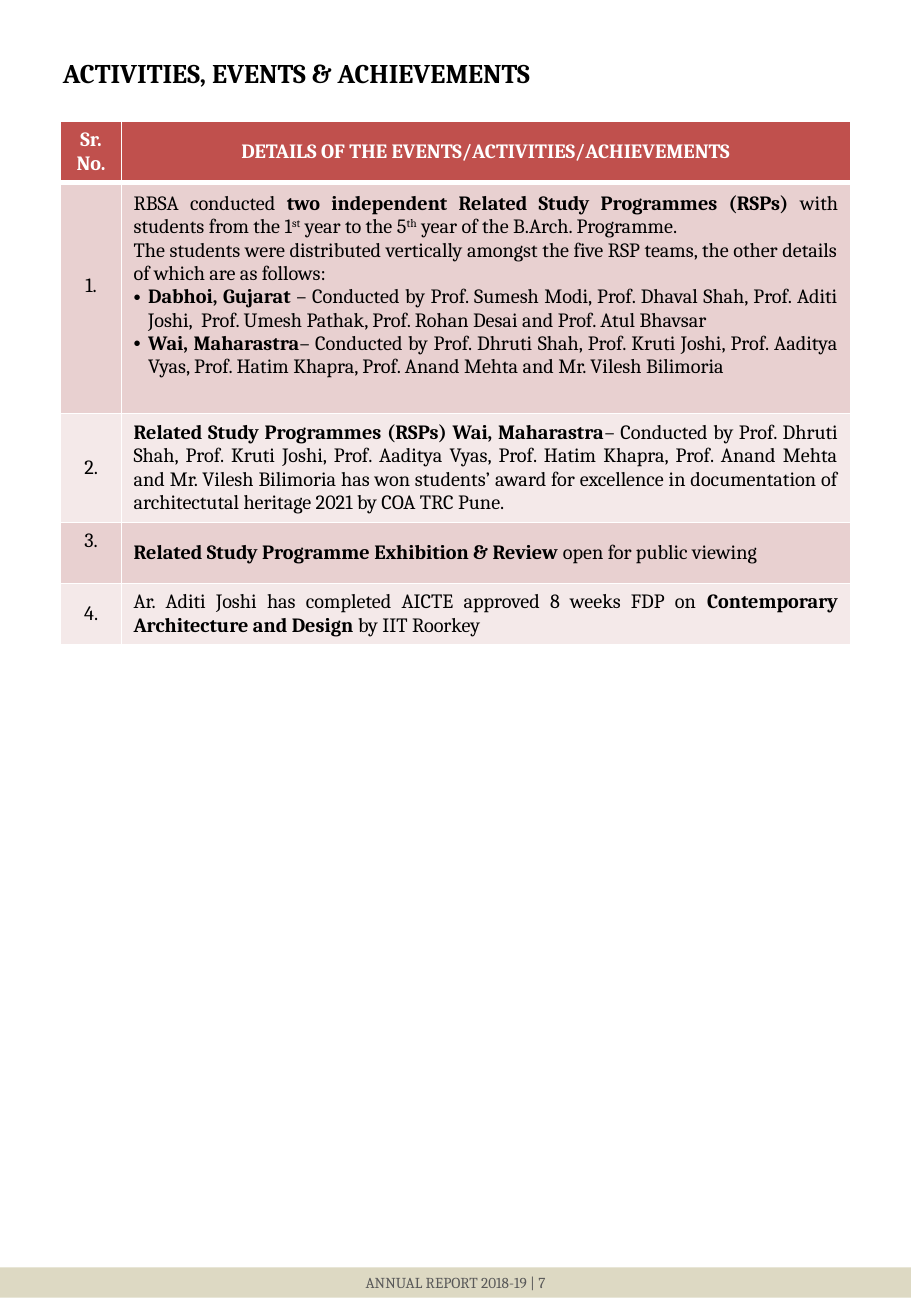
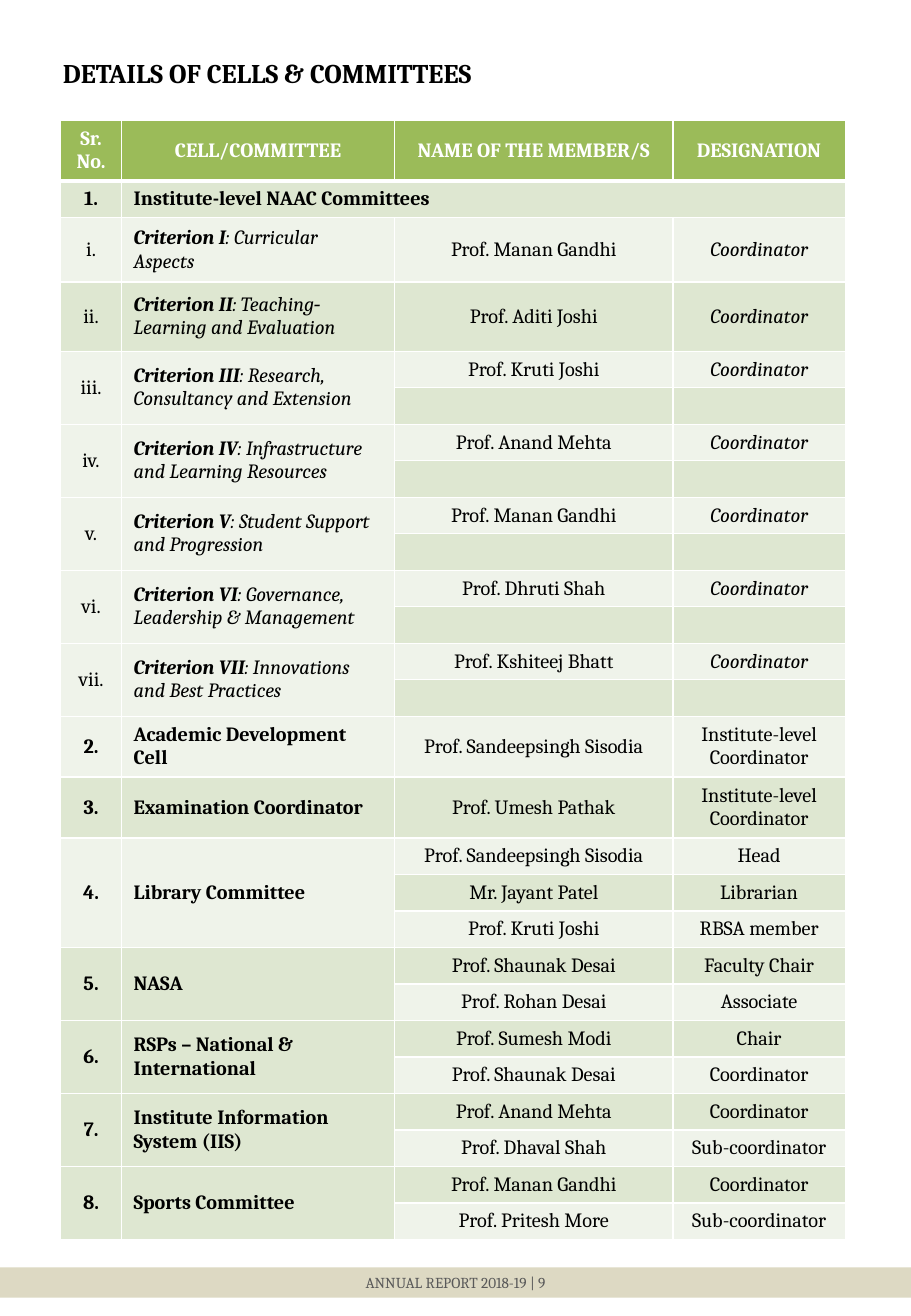
from lxml.etree import SubElement
from pptx import Presentation
from pptx.dml.color import RGBColor
from pptx.enum.shapes import MSO_SHAPE
from pptx.enum.text import MSO_ANCHOR, MSO_AUTO_SIZE, PP_ALIGN
from pptx.oxml.ns import qn
from pptx.util import Inches, Pt

LEFT, MID, FULL = PP_ALIGN.LEFT, PP_ALIGN.CENTER, PP_ALIGN.JUSTIFY
BLACK, WHITE, GREY, SAND = "000000", "FFFFFF", "595959", "DDD9C3"


def paint(fill, tone):
    fill.solid()
    fill.fore_color.rgb = RGBColor.from_string(tone)


def write(frame, paras, size, tone, align):
    for n, runs in enumerate(paras):
        para = frame.add_paragraph() if n else frame.paragraphs[0]
        para.alignment = align
        props = para._p.get_or_add_pPr()
        for text, style in runs:
            if "•" in style:
                props.set("marL", str(Inches(0.12)))
                props.set("indent", str(-Inches(0.12)))
                SubElement(props, qn("a:buFont"), typeface="Arial")
                SubElement(props, qn("a:buChar"), char="•")
            run = para.add_run()
            run.text = text
            font = run.font
            font.name, font.size = "Cambria", Pt(size)
            font.bold, font.italic = "b" in style, "i" in style
            paint(font.fill, tone)
            if "^" in style:
                run._r.get_or_add_rPr().set("baseline", "30000")


wai = ("– Conducted by Prof. Dhruti Shah, Prof. Kruti Joshi, Prof. Aaditya Vyas, "
       "Prof. Hatim Khapra, Prof. Anand Mehta and Mr. Vilesh Bilimoria")
events = [
    [[("RBSA conducted ", ""), ("two independent Related Study Programmes (RSPs) ", "b"),
      ("with students from the 1", ""), ("st", "^"), (" year to the 5", ""), ("th", "^"),
      (" year of the B.Arch. Programme.", "")],
     [("The students were distributed vertically amongst the five RSP teams, "
       "the other details of which are as follows:", "")],
     [("Dabhoi, Gujarat", "b•"),
      (" – Conducted by Prof. Sumesh Modi, Prof. Dhaval Shah, Prof. Aditi Joshi,  "
       "Prof. Umesh Pathak, Prof. Rohan Desai and Prof. Atul Bhavsar", "")],
     [("Wai, Maharastra", "b•"), (wai, "")]],
    [[("Related Study Programmes (RSPs) Wai, Maharastra", "b"),
      (wai + " has won students’ award for excellence in documentation of "
       "architectutal heritage 2021 by COA TRC Pune.", "")]],
    [[("Related Study Programme Exhibition & Review ", "b"),
      ("open for public viewing", "")]],
    [[("Ar. Aditi Joshi has completed AICTE approved 8 weeks FDP on ", ""),
      ("Contemporary Architecture and Design ", "b"), ("by IIT Roorkey", "")]],
]
goals = [
    ("I", "Curricular Aspects", "Prof. Manan Gandhi", 1),
    ("II", "Teaching‐ Learning and Evaluation", "Prof. Aditi Joshi", 1),
    ("III", "Research, Consultancy and Extension", "Prof. Kruti Joshi", 2),
    ("IV", "Infrastructure and Learning Resources", "Prof. Anand Mehta", 2),
    ("V", "Student Support and Progression", "Prof. Manan Gandhi", 2),
    ("VI", "Governance, Leadership & Management", "Prof. Dhruti Shah", 2),
    ("VII", "Innovations and Best Practices", "Prof. Kshiteej Bhatt", 2),
]
teams = [
    ("Academic Development Cell",
     [("Prof. Sandeepsingh Sisodia", "Institute-level Coordinator")]),
    ("Examination Coordinator", [("Prof. Umesh Pathak", "Institute-level Coordinator")]),
    ("Library Committee", [("Prof. Sandeepsingh Sisodia", "Head"),
                           ("Mr. Jayant Patel", "Librarian"),
                           ("Prof. Kruti Joshi", "RBSA member")]),
    ("NASA", [("Prof. Shaunak Desai", "Faculty Chair"), ("Prof. Rohan Desai", "Associate")]),
    ("RSPs – National & International", [("Prof. Sumesh Modi", "Chair"),
                                         ("Prof. Shaunak Desai", "Coordinator")]),
    ("Institute Information System (IIS)", [("Prof. Anand Mehta", "Coordinator"),
                                            ("Prof. Dhaval Shah", "Sub-coordinator")]),
    ("Sports Committee", [("Prof. Manan Gandhi", "Coordinator"),
                          ("Prof. Pritesh More", "Sub-coordinator")]),
]

acts = [[[[(f"{n}.", "")]], body] for n, body in enumerate(events, 1)]
cells = [[[[("1.", "b")]], [[("Institute-level NAAC Committees", "b")]], [], []]]
joins = [(1, 1, 1, 3)]
for mark, aim, name, span in goals:
    top = len(cells) + 1
    cells.append([[[(mark.lower() + ".", "")]],
                  [[("Criterion " + mark, "bi"), (": " + aim, "i")]],
                  [[(name, "")]], [[("Coordinator", "i")]]])
    if span > 1:
        cells.append([[], [], [], []])
        joins += [(top, col, top + 1, col) for col in (0, 1)]
for n, (team, crew) in enumerate(teams, 2):
    top = len(cells) + 1
    for k, (name, role) in enumerate(crew):
        lead = [[], []] if k else [[[(f"{n}.", "b")]], [[(team, "b")]]]
        cells.append(lead + [[[(name, "")]], [[(role, "")]]])
    if len(crew) > 1:
        joins += [(top, col, top + len(crew) - 1, col) for col in (0, 1)]

pages = [
    dict(title="ACTIVITIES, EVENTS & ACHIEVEMENTS", page=7, top=1,
         heads=["Sr. No.", "DETAILS OF THE EVENTS/ACTIVITIES/ACHIEVEMENTS"],
         rows=acts, joins=[], wide=[0.5, 6], high=[0.5, 1.9, 0.9, 0.5, 0.5],
         tones=("C0504D", "E8D0D0", "F4E9E9"), aligns=[MID, FULL],
         raised=[(1, 0), (1, 1), (3, 0)]),
    dict(title="DETAILS OF CELLS & COMMITTEES", page=9, top=0.99,
         heads=["Sr. No.", "CELL/COMMITTEE", "NAME OF THE MEMBER/S", "DESIGNATION"],
         rows=cells, joins=joins, wide=[0.5, 2.25, 2.29, 1.42],
         high=[0.5, 0.3, 0.53, 0.57] + [0.3] * 10 + [0.5] * 2 + [0.3] * 11,
         tones=("9BBB59", "DEE7D1", "EFF3EA"), aligns=[MID, LEFT, MID, MID], raised=[]),
]

deck = Presentation()
deck.slide_width, deck.slide_height = Inches(7.5), Inches(10.83)
for page in pages:
    slide = deck.slides.add_slide(deck.slide_layouts[6])
    title = slide.shapes.add_textbox(Inches(0.42), Inches(0.42), Inches(7), Inches(0.37))
    title.text_frame.word_wrap = True
    title.text_frame.auto_size = MSO_AUTO_SIZE.SHAPE_TO_FIT_TEXT
    write(title.text_frame, [[(page["title"], "b")]], 16, BLACK, LEFT)

    rows = [[[[(head, "b")]] for head in page["heads"]]] + page["rows"]
    wide, high = page["wide"], page["high"]
    grid = slide.shapes.add_table(len(rows), len(wide), Inches(0.5), Inches(page["top"]),
                                  Inches(sum(wide)), Inches(sum(high))).table
    for col, width in zip(grid.columns, wide):
        col.width = Inches(width)
    for row, height in zip(grid.rows, high):
        row.height = Inches(height)
    for r, row in enumerate(rows):
        for c, paras in enumerate(row):
            cell = grid.cell(r, c)
            cell.vertical_anchor = MSO_ANCHOR.MIDDLE
            if (r, c) in page["raised"]:
                cell.margin_bottom = Inches(0.25)
            props = cell._tc.get_or_add_tcPr()
            for side in "LRTB":
                thick = (r, side) in [(0, "B"), (1, "T")]
                line = SubElement(props, qn("a:ln" + side), w=str(Pt(3 if thick else 1)))
                ink = SubElement(line, qn("a:solidFill"))
                SubElement(ink, qn("a:srgbClr"), val=WHITE)
            head, dark, light = page["tones"]
            paint(cell.fill, (dark if r % 2 else light) if r else head)
            if paras:
                write(cell.text_frame, paras, 12, BLACK if r else WHITE,
                      page["aligns"][c] if r else MID)
            else:
                SubElement(cell.text_frame.paragraphs[0]._p, qn("a:endParaRPr"), sz="1200")
    for top, left, end, right in page["joins"]:
        grid.cell(top, left).merge(grid.cell(end, right))

    band = slide.shapes.add_shape(MSO_SHAPE.RECTANGLE, 0, Inches(10.43),
                                  Inches(7.5), Inches(0.25))
    band.shadow.inherit = False
    band.line.fill.background()
    paint(band.fill, SAND)
    band.text_frame.word_wrap = True
    band.text_frame.auto_size = MSO_AUTO_SIZE.SHAPE_TO_FIT_TEXT
    write(band.text_frame, [[(f"ANNUAL REPORT 2018-19 | {page['page']}", "")]], 9, GREY, MID)

deck.save("out.pptx")
